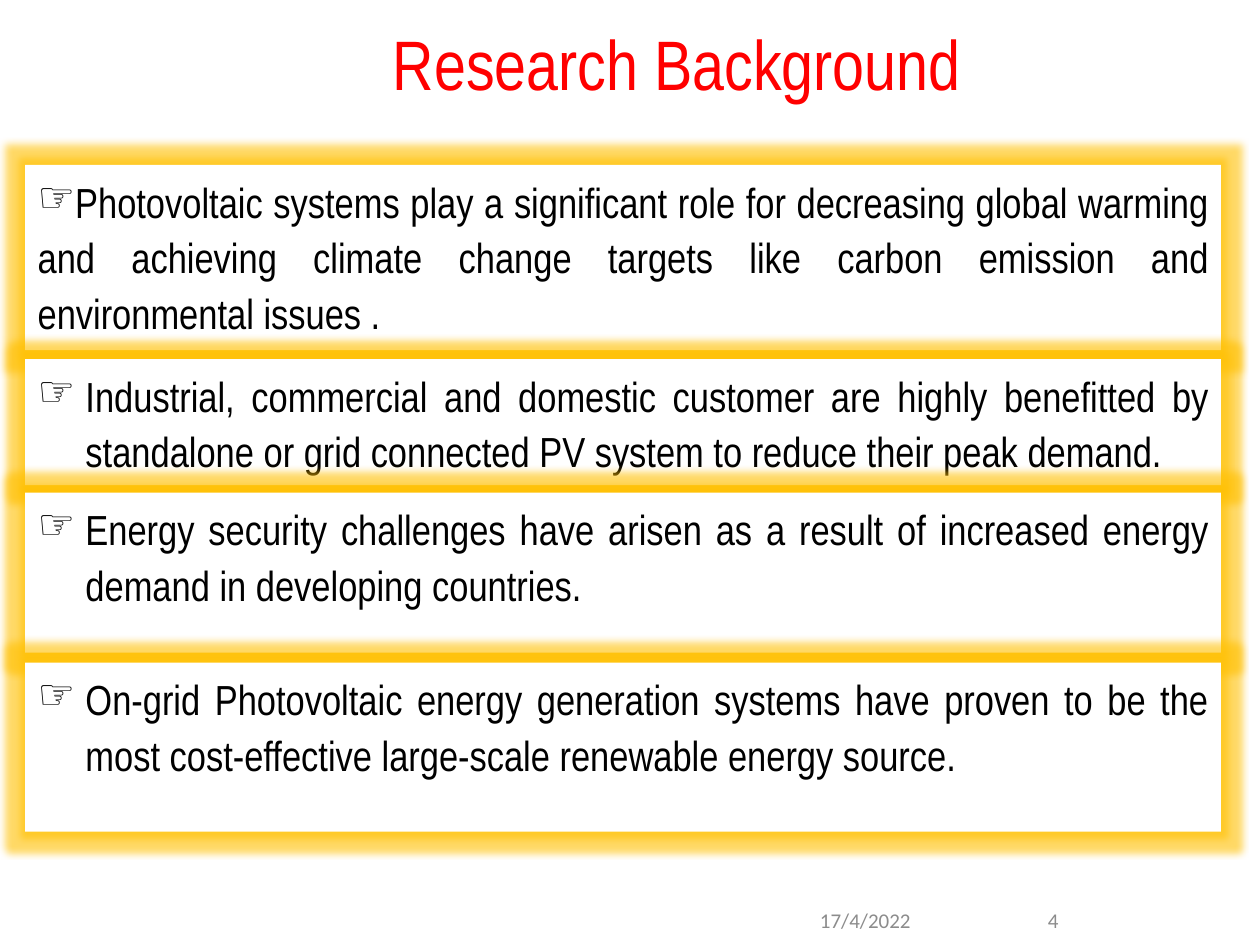
from dataclasses import dataclass

from lxml.etree import SubElement
from pptx import Presentation
from pptx.dml.color import RGBColor
from pptx.enum.shapes import MSO_SHAPE
from pptx.enum.text import MSO_ANCHOR, PP_ALIGN
from pptx.oxml.ns import qn
from pptx.slide import Slide
from pptx.text.text import _Paragraph as Paragraph
from pptx.util import Inches, Pt


@dataclass(frozen=True)
class Theme:
    heading_font: str = "Arial Narrow"
    footer_font: str = "Calibri"
    title_size: int = 40
    body_size: int = 24
    footer_size: int = 12
    red: str = "FF0000"
    black: str = "000000"
    white: str = "FFFFFF"
    grey: str = "8C8C8C"
    glow: str = "FFC000"
    glow_opacity: int = 60
    glow_radius: int = 8


@dataclass(frozen=True)
class Statement:
    text: str
    top: float
    height: float
    hanging: float = 0.38


@dataclass(frozen=True)
class Label:
    text: str
    left: float
    top: float
    width: float
    height: float
    font: str
    size: int
    color: str
    anchor: MSO_ANCHOR
    align: PP_ALIGN
    line_spacing: float = 1.0


THEME = Theme()
PANEL_LEFT, PANEL_WIDTH = 0.2, 9.49
FOOTER_TOP, FOOTER_HEIGHT = 7.1, 0.4

LABELS = [
    Label("Research Background", 1.15, -0.14, 8.44, 1.02, THEME.heading_font,
          THEME.title_size, THEME.red, MSO_ANCHOR.BOTTOM, PP_ALIGN.CENTER, 1.2),
    Label("17/4/2022", 6.41, FOOTER_TOP, 1.4, FOOTER_HEIGHT, THEME.footer_font,
          THEME.footer_size, THEME.grey, MSO_ANCHOR.MIDDLE, PP_ALIGN.LEFT),
    Label("4", 7.89, FOOTER_TOP, 0.61, FOOTER_HEIGHT, THEME.footer_font,
          THEME.footer_size, THEME.grey, MSO_ANCHOR.MIDDLE, PP_ALIGN.RIGHT),
]

STATEMENTS = [
    Statement("Photovoltaic systems play a significant role for decreasing global "
              "warming and achieving climate change targets like carbon emission "
              "and environmental issues .", 1.31, 1.47, hanging=0),
    Statement("Industrial, commercial and domestic customer are highly benefitted "
              "by standalone or grid connected PV system to reduce their peak "
              "demand.", 2.85, 1.0),
    Statement("Energy security challenges have arisen as a result of increased "
              "energy demand in developing countries.", 3.91, 1.27),
    Statement("On-grid Photovoltaic energy generation systems have proven to be "
              "the most cost-effective large-scale renewable energy source.",
              5.26, 1.34),
]


def add_run(paragraph: Paragraph, text: str, font: str, size: int, color: str) -> None:
    run = paragraph.add_run()
    run.text = text
    run.font.name = font
    run.font.size = Pt(size)
    run.font.color.rgb = RGBColor.from_string(color)


def add_label(slide: Slide, label: Label) -> None:
    box = slide.shapes.add_textbox(Inches(label.left), Inches(label.top),
                                   Inches(label.width), Inches(label.height))
    frame = box.text_frame
    frame.word_wrap = True
    frame.vertical_anchor = label.anchor
    paragraph = frame.paragraphs[0]
    paragraph.alignment = label.align
    paragraph.line_spacing = label.line_spacing
    add_run(paragraph, label.text, label.font, label.size, label.color)


def add_bullet(paragraph: Paragraph, hanging: float) -> None:
    properties = paragraph._p.get_or_add_pPr()
    properties.set("marL", str(Inches(hanging)))
    properties.set("indent", str(-Inches(hanging)))
    SubElement(properties, qn("a:buFont"), typeface=THEME.heading_font)
    SubElement(properties, qn("a:buChar"), char="☞")


def add_statement(slide: Slide, statement: Statement) -> None:
    """Draw a white panel with a golden glow and one bulleted statement."""
    panel = slide.shapes.add_shape(
        MSO_SHAPE.RECTANGLE, Inches(PANEL_LEFT), Inches(statement.top),
        Inches(PANEL_WIDTH), Inches(statement.height))
    panel.fill.solid()
    panel.fill.fore_color.rgb = RGBColor.from_string(THEME.white)
    panel.line.fill.background()
    panel.shadow.inherit = False
    effects = panel._element.spPr.find(qn("a:effectLst"))
    glow = SubElement(effects, qn("a:glow"), rad=str(Pt(THEME.glow_radius)))
    color = SubElement(glow, qn("a:srgbClr"), val=THEME.glow)
    SubElement(color, qn("a:alpha"), val=str(THEME.glow_opacity * 1000))

    frame = panel.text_frame
    frame.word_wrap = True
    frame.vertical_anchor = MSO_ANCHOR.TOP
    paragraph = frame.paragraphs[0]
    add_bullet(paragraph, statement.hanging)
    paragraph.alignment = PP_ALIGN.JUSTIFY
    paragraph.line_spacing = 1.1
    add_run(paragraph, statement.text, THEME.heading_font, THEME.body_size, THEME.black)


def main() -> None:
    presentation = Presentation()
    presentation.slide_width = Inches(10)
    presentation.slide_height = Inches(7.5)
    slide = presentation.slides.add_slide(presentation.slide_layouts[6])
    for label in LABELS:
        add_label(slide, label)
    for statement in STATEMENTS:
        add_statement(slide, statement)
    presentation.save("out.pptx")


if __name__ == "__main__":
    main()
